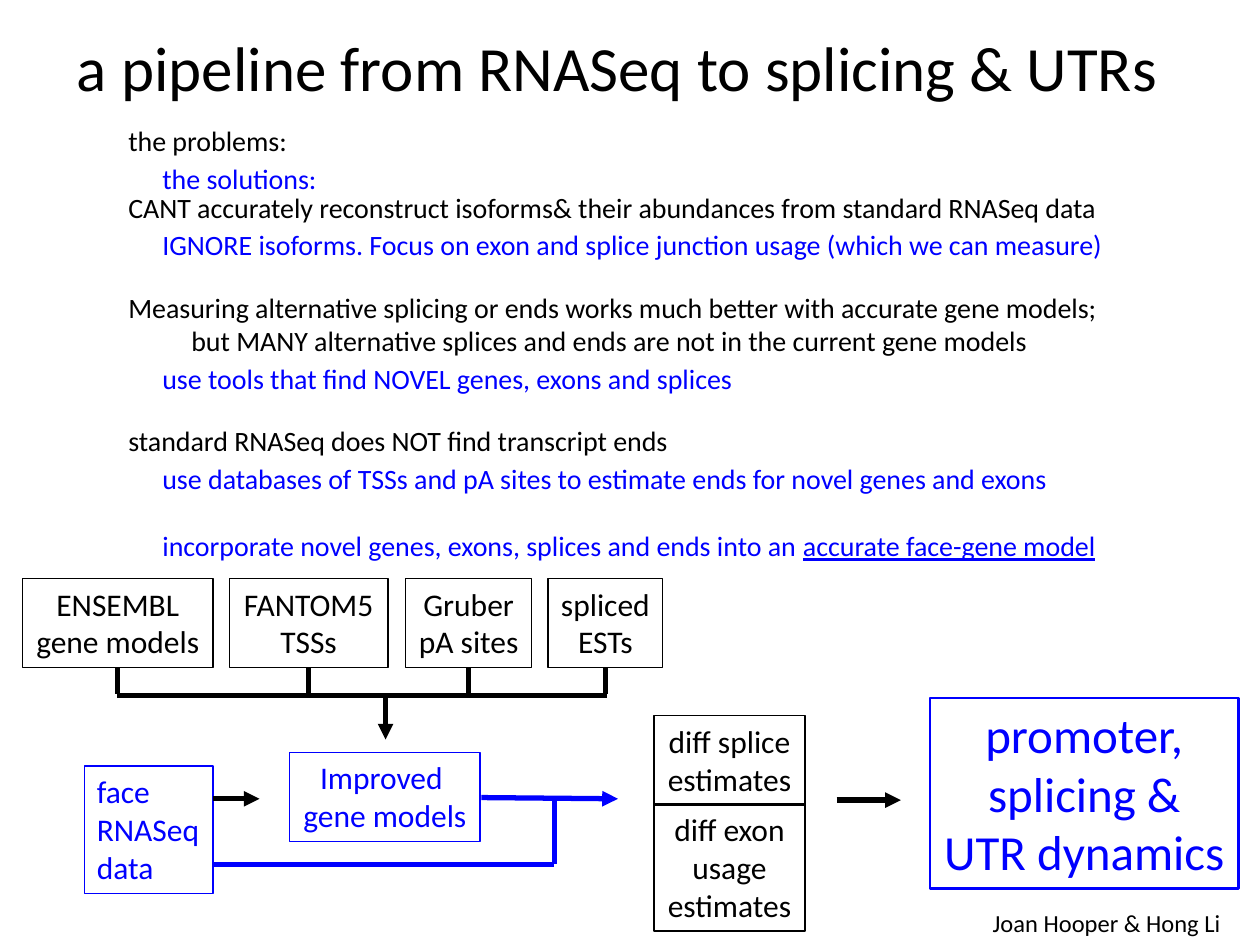
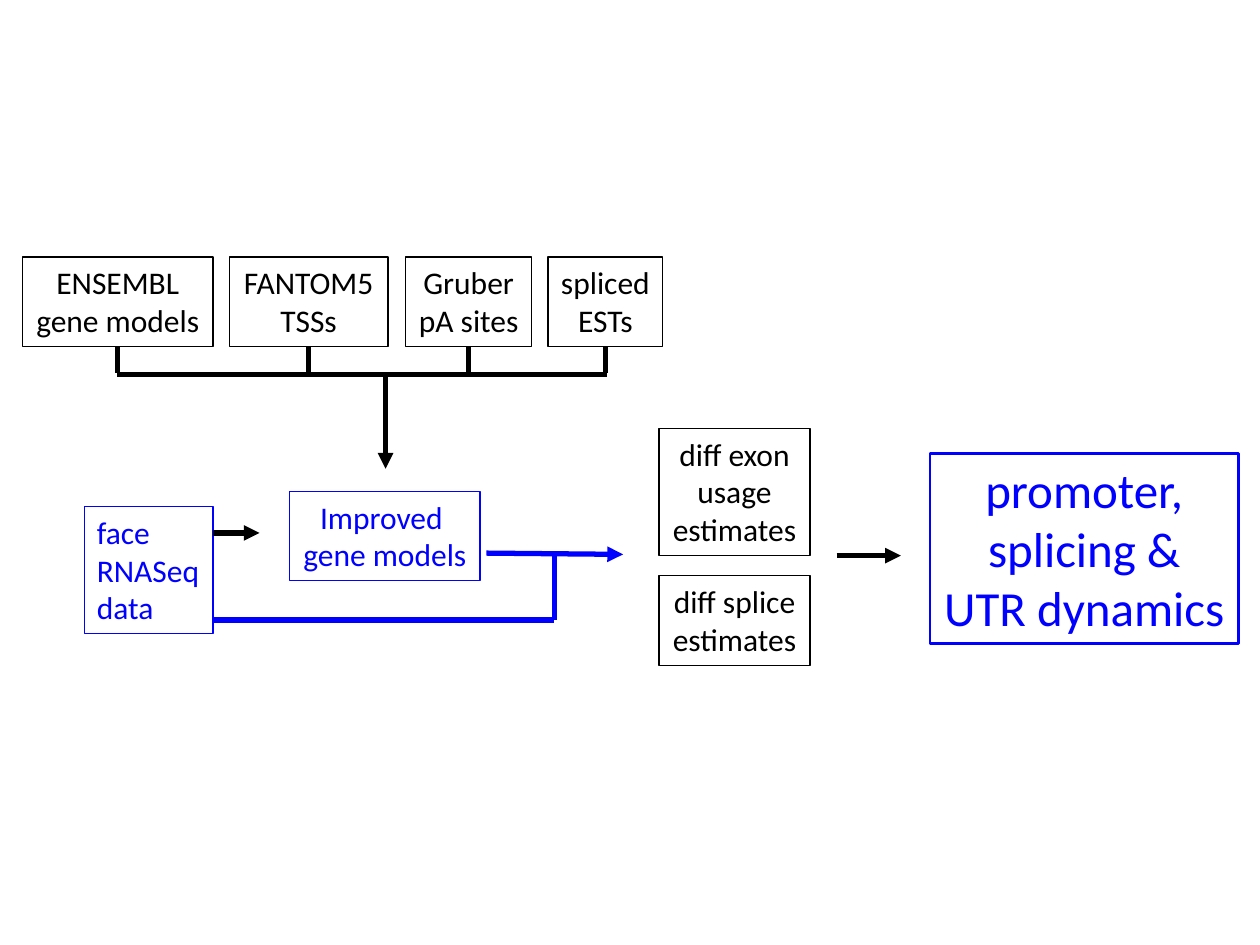
from lxml.etree import SubElement
from pptx import Presentation
from pptx.dml.color import RGBColor
from pptx.enum.shapes import MSO_CONNECTOR as Connector, MSO_SHAPE as Preset
from pptx.enum.text import MSO_ANCHOR as Anchor, MSO_AUTO_SIZE as AutoSize, PP_ALIGN as Align
from pptx.oxml.ns import qn
from pptx.util import Inches, Pt

# Theme: colours, type sizes and text styles
BLACK, BLUE = RGBColor(0, 0, 0), RGBColor(0, 0, 255)
THEME = {
    "font": "Calibri",
    "connector": Pt(3),
    "blank_line": 19,
    "title": {"size": 36, "color": BLACK, "align": Align.CENTER, "anchor": Anchor.MIDDLE},
    "problem": {"size": 16, "color": BLACK},
    "solution": {"size": 16, "color": BLUE},
    "credit": {"size": 14, "color": BLACK},
    "box": {"size": 18, "color": BLACK, "align": Align.CENTER, "border": 0.75},
    "key_box": {"size": 18, "color": BLUE, "align": Align.CENTER, "border": 0.75},
    "data_box": {"size": 18, "color": BLUE, "border": 0.75},
    "result_box": {"size": 28, "color": BLUE, "align": Align.CENTER, "border": 1.5},
}

presentation = Presentation()
presentation.slide_width, presentation.slide_height = Inches(10), Inches(7.5)

# Grid of 100 columns by 75 rows
COLUMN = presentation.slide_width / 100
ROW = presentation.slide_height / 75


def add_text(slide, style_name, lines, left, top, width, height):
    """Place lines of text, framed when the style has a border."""
    style = THEME[style_name]
    area = [round(left * COLUMN), round(top * ROW), round(width * COLUMN), round(height * ROW)]
    if "border" in style:
        shape = slide.shapes.add_shape(Preset.RECTANGLE, *area)
        shape.shadow.inherit = False
        shape.fill.background()
        shape.line.color.rgb = style["color"]
        shape.line.width = Pt(style["border"])
    else:
        shape = slide.shapes.add_textbox(*area)
    frame = shape.text_frame
    frame.text = "\n".join(lines)
    frame_format = {
        "word_wrap": style_name == "title",
        "auto_size": AutoSize.NONE if style_name == "title" else AutoSize.SHAPE_TO_FIT_TEXT,
        "vertical_anchor": style.get("anchor", Anchor.TOP),
    }
    for name, value in frame_format.items():
        setattr(frame, name, value)
    for paragraph in frame.paragraphs:
        paragraph.alignment = style.get("align", Align.LEFT)
        font = paragraph.font
        for name, value in {"name": THEME["font"], "size": Pt(style["size"])}.items():
            setattr(font, name, value)
        font.color.rgb = style["color"]
        for run in paragraph.runs:
            run.font.name, run.font.size = THEME["font"], Pt(style["size"])
            run.font.color.rgb = style["color"]
    return frame.paragraphs


def add_line(slide, color, start, end, arrow=False):
    """Draw a straight connector, with an arrowhead at its end if asked."""
    points = [round(value * unit) for point in (start, end) for value, unit in zip(point, (COLUMN, ROW))]
    connector = slide.shapes.add_connector(Connector.STRAIGHT, *points)
    connector.line.color.rgb = color
    connector.line.width = THEME["connector"]
    if arrow:
        SubElement(connector.line._get_or_add_ln(), qn("a:tailEnd"), type="triangle")
    SubElement(connector._element.spPr, qn("a:effectLst"))


# What the pipeline diagram holds, and where its parts stand on each slide
SOURCES = [
    (("ENSEMBL", "gene models"), 1.8, 15.1),
    (("FANTOM5", "TSSs"), 18.2, 12.6),
    (("Gruber", "pA sites"), 32.2, 10),
    (("spliced", "ESTs"), 43.5, 9.1),
]
TWO_LINES, THREE_LINES = 7.1, 10.1
DIAGRAMS = [
    {"sources": 45.9, "drop_end": 58.7, "data": 60.8, "data_arrow": 63.4, "models": 59.7,
     "models_arrow": (38.2, 63.3), "loop": 68.6, "estimates": 51.9, "exon": 63.8,
     "splice": 56.8, "result": 55.4, "result_arrow": 63.5},
    {"sources": 20.4, "drop_end": 37.2, "data": 40.2, "data_arrow": 42.3, "models": 39,
     "models_arrow": (38.6, 43.9), "loop": 49.2, "estimates": 52.3, "exon": 34,
     "splice": 45.7, "result": 36, "result_arrow": 44.1},
]

slides = []
for rows in DIAGRAMS:
    slide = presentation.slides.add_slide(presentation.slide_layouts[6])
    slides.append(slide)

    # Sources, each with a stem down to the shared bar
    stem_top = rows["sources"] + TWO_LINES
    bar = stem_top + 2.2
    for lines, left, width in SOURCES:
        add_text(slide, "box", lines, left, rows["sources"], width, TWO_LINES)
        middle = left + width / 2
        add_line(slide, BLACK, (middle, stem_top), (middle, bar - 0.1))
    add_line(slide, BLACK, (9.3, bar), (48.2, bar))
    add_line(slide, BLACK, (30.6, bar), (30.6, rows["drop_end"]), arrow=True)

    # Sequencing data and improved models
    add_text(slide, "data_box", ("face", "RNASeq", "data"), 6.7, rows["data"], 10.2, THREE_LINES)
    add_text(slide, "key_box", ("Improved ", "gene models"), 23, rows["models"], 15.1, TWO_LINES)
    add_line(slide, BLACK, (16.9, rows["data_arrow"]), (20.6, rows["data_arrow"]), arrow=True)

    # Both feed the estimates
    start, level = rows["models_arrow"]
    add_line(slide, BLUE, (16.9, rows["loop"]), (44, rows["loop"]))
    add_line(slide, BLUE, (start, level), (start + 10.85, level + 0.1), arrow=True)
    add_line(slide, BLUE, (44, rows["loop"]), (44, level + 0.1))
    add_text(slide, "box", ("diff exon", "usage", "estimates"),
             rows["estimates"], rows["exon"], 12, THREE_LINES)
    add_text(slide, "box", ("diff splice", "estimates"),
             rows["estimates"], rows["splice"], 12, TWO_LINES)

    # Result
    add_line(slide, BLACK, (66.4, rows["result_arrow"]), (71.5, rows["result_arrow"]), arrow=True)
    add_text(slide, "result_box", ("promoter,", "splicing &", "UTR dynamics"),
             73.8, rows["result"], 24.5, 15.1)

# First slide: title, problems with solutions between them, credit
overview = slides[0]
add_text(overview, "title", ["a pipeline from RNASeq to splicing & UTRs"], 4, -1, 90, 12.5)

# Each line follows the number of blank lines to leave above it
PROBLEMS = [
    (0, "the problems:"),
    (1, "CANT accurately reconstruct isoforms& their abundances from standard RNASeq data"),
    (2, "Measuring alternative splicing or ends works much better with accurate gene models;"),
    (0, "but MANY alternative splices and ends are not in the current gene models"),
    (2, "standard RNASeq does NOT find transcript ends"),
]
SOLUTIONS = [
    (0, "the solutions:"),
    (1, "IGNORE isoforms. Focus on exon and splice junction usage (which we can measure)"),
    (3, "use tools that find NOVEL genes, exons and splices"),
    (2, "use databases of TSSs and pA sites to estimate ends for novel genes and exons"),
    (1, "incorporate novel genes, exons, splices and ends into an "),
]
columns = {}
for style_name, entries, area in (
    ("problem", PROBLEMS, (9.2, 9.3, 80.2, 27.9)),
    ("solution", SOLUTIONS, (11.9, 12.3, 77.8, 33.3)),
):
    paragraphs = add_text(overview, style_name, [text for _, text in entries], *area)
    for paragraph, (blank_lines, _) in zip(paragraphs, entries):
        paragraph.space_before = Pt(blank_lines * THEME["blank_line"])
    columns[style_name] = paragraphs

# Indent the continued problem and underline the goal
columns["problem"][3]._p.get_or_add_pPr().set("marL", str(Inches(0.5)))
goal = columns["solution"][-1].add_run()
goal.text = "accurate face-gene model"
goal_format = {"name": THEME["font"], "size": Pt(THEME["solution"]["size"]), "underline": True}
for name, value in goal_format.items():
    setattr(goal.font, name, value)
goal.font.color.rgb = BLUE

add_text(overview, "credit", ["Joan Hooper & Hong Li"], 77.8, 71.6, 20.3, 3.4)

presentation.save("out.pptx")
